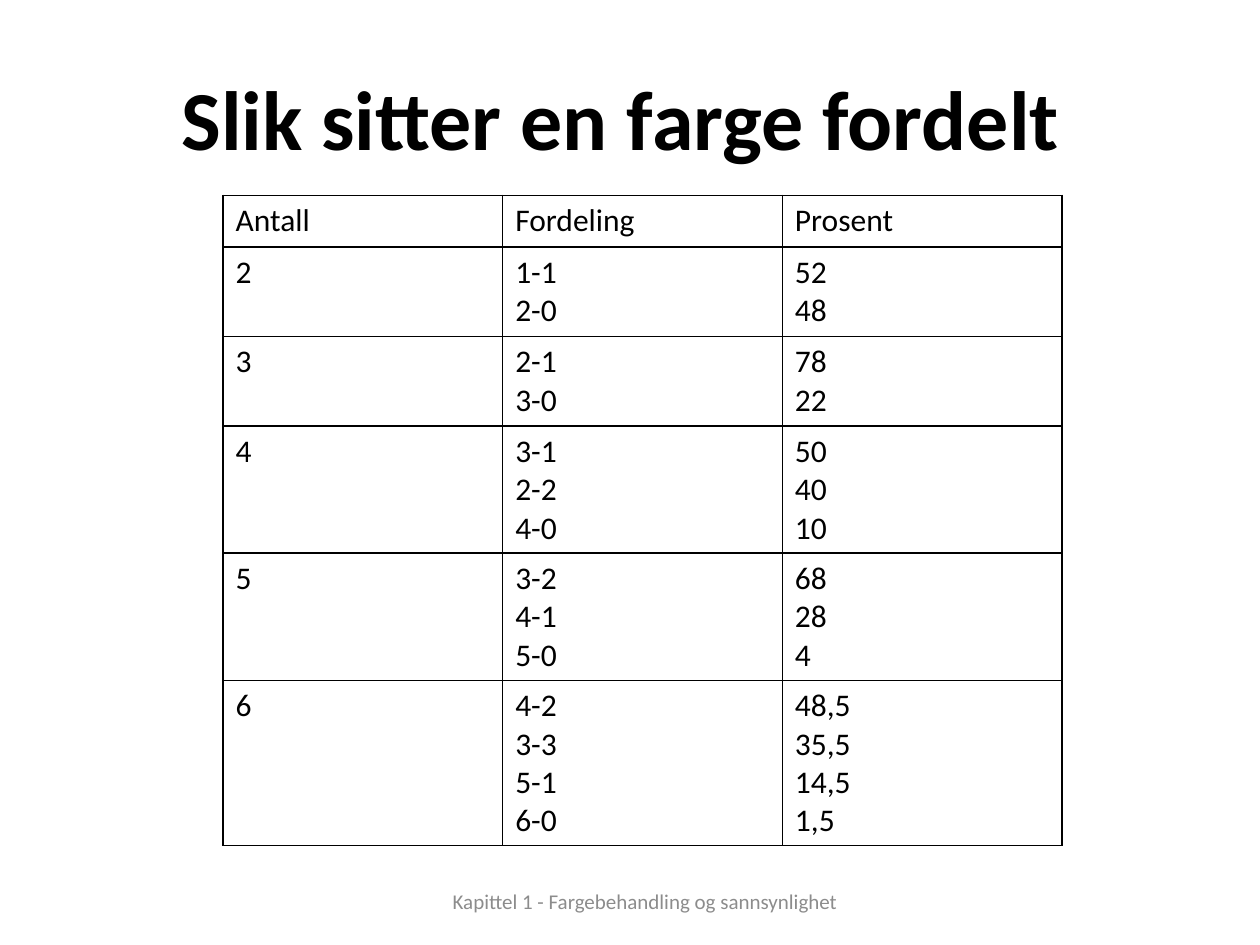
import pptx
import pptx.util
import pptx.dml.color
import pptx.enum.text
import pptx.oxml

WIDTH, HEIGHT = 10, 7.5
FONT = "Calibri"
ROWS = [
    ("Antall", "Fordeling", "Prosent"),
    ("2", "1-1\n2-0", "52\n48"),
    ("3", "2-1\n3-0", "78\n22"),
    ("4", "3-1\n2-2\n4-0", "50\n40\n10"),
    ("5", "3-2\n4-1\n5-0", "68\n28\n4"),
    ("6", "4-2\n3-3\n5-1\n6-0", "48,5\n35,5\n14,5\n1,5"),
]


def inches(*values):
    """Convert numbers to lengths in inches."""
    return [pptx.util.Inches(v) for v in values]


def color(value):
    """Return the colour of a hex string."""
    return pptx.dml.color.RGBColor.from_string(value)


def format_text(tf, size, fill="000000", bold=False, align=None):
    """Format every paragraph and run of a text frame."""
    for p in tf.paragraphs:
        p.alignment = align
        for r in p.runs:
            r.font.name = FONT
            r.font.size = pptx.util.Pt(size)
            r.font.bold = bold
            r.font.color.rgb = color(fill)


def fill_centered(sp, text, box, size, fill="000000", bold=False):
    """Place a shape and give it centred text."""
    sp.left, sp.top, sp.width, sp.height = inches(*box)
    tf = sp.text_frame
    tf.text = text
    tf.word_wrap = True
    tf.vertical_anchor = pptx.enum.text.MSO_ANCHOR.MIDDLE
    format_text(tf, size, fill, bold, pptx.enum.text.PP_ALIGN.CENTER)


def add_borders(cell, width=1, line="000000"):
    """Draw a solid border on all four sides of a cell."""
    tcPr = cell._tc.get_or_add_tcPr()
    for i, side in enumerate(("lnL", "lnR", "lnT", "lnB")):
        tcPr.insert(i, pptx.oxml.parse_xml(
            f'<a:{side} xmlns:a="http://schemas.openxmlformats.org/drawingml/2006/main"'
            f' w="{pptx.util.Pt(width)}"><a:solidFill><a:srgbClr val="{line}"/>'
            f'</a:solidFill></a:{side}>'))


def add_distribution_table(s, rows, left, top, col_width, line_height, padding):
    """Add the table with row heights that follow the line counts."""
    lines = [max(text.count("\n") + 1 for text in row) for row in rows]
    heights = [padding + line_height * n for n in lines]
    cols = len(rows[0])
    box = inches(left, top, col_width * cols, sum(heights))
    table = s.shapes.add_table(len(rows), cols, *box).table
    table.first_row = table.horz_banding = False
    for column in table.columns:
        column.width = pptx.util.Inches(col_width)
    for i, row in enumerate(rows):
        table.rows[i].height = pptx.util.Inches(heights[i])
        for j, text in enumerate(row):
            cell = table.cell(i, j)
            cell.text_frame.text = text
            format_text(cell.text_frame, 18)
            cell.fill.background()
            add_borders(cell)


def main():
    """Build the slide and save it."""
    prs = pptx.Presentation()
    prs.slide_width, prs.slide_height = inches(WIDTH, HEIGHT)
    s = prs.slides.add_slide(prs.slide_layouts[5])
    fill_centered(s.shapes.title, "Slik sitter en farge fordelt ",
                  (0.05 * WIDTH, 0.04 * HEIGHT, 0.9 * WIDTH, 1.25), 48, bold=True)
    footer = s.shapes.add_textbox(0, 0, 0, 0)
    fill_centered(footer, "Kapittel 1 - Fargebehandling og sannsynlighet",
                  (3.11, 6.95, 4.02, 0.4), 12, "8C8C8C")
    add_distribution_table(s, ROWS, 1.77, 1.55, 2.22, 0.3, 0.11)
    prs.save("out.pptx")


if __name__ == "__main__":
    main()
